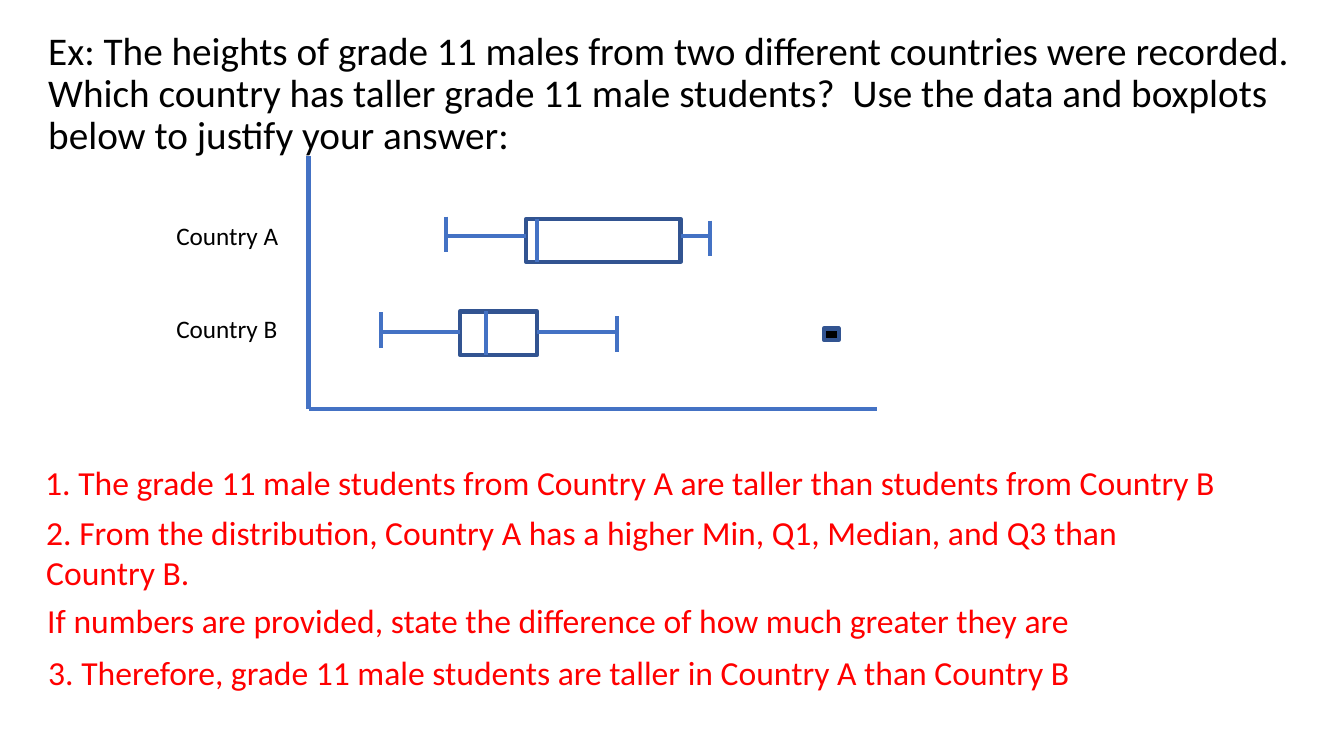
from lxml import etree
from pptx import Presentation
from pptx.dml.color import RGBColor
from pptx.enum.shapes import MSO_CONNECTOR, MSO_SHAPE
from pptx.oxml.ns import qn
from pptx.util import Inches, Pt

STRAIGHT = MSO_CONNECTOR.STRAIGHT
RECTANGLE = MSO_SHAPE.RECTANGLE

BLACK = RGBColor(0x00, 0x00, 0x00)
RED = RGBColor(0xFF, 0x00, 0x00)
BLUE = RGBColor(0x44, 0x72, 0xC4)
DARK_BLUE = RGBColor(0x32, 0x54, 0x91)

FONT = "Calibri"
LINE_WIDTH = Pt(3)
BOX_HEIGHT = 0.43
CAP_HEIGHT = 0.35

QUESTION = (
    "Ex: The heights of grade 11 males from two different countries were recorded. "
    "Which country has taller grade 11 male students?  "
    "Use the data and boxplots below to justify your answer:"
)
COUNTRIES = [("Country A", 2.14), ("Country B", 3.06)]
BOXPLOTS = [
    {"q1": 5.22, "median": 5.33, "q3": 6.75, "box_top": 2.17, "middle": 2.34,
     "caps": [(4.42, 2.15), (7.04, 2.19)]},
    {"q1": 4.56, "median": 4.82, "q3": 5.33, "box_top": 3.09, "middle": 3.29,
     "caps": [(3.78, 3.1), (6.12, 3.14)]},
]
ANSWERS = [
    ("1. The grade 11 male students from Country A are taller than students from Country B",
     (0.35, 4.53, 12.45, 0.5)),
    ("2. From the distribution, Country A has a higher Min, Q1, Median, and Q3 than Country B.",
     (0.36, 5.03, 11.39, 0.91)),
    ("If numbers are provided, state the difference of how much greater they are",
     (0.37, 5.9, 11.39, 0.5)),
    ("3. Therefore, grade 11 male students are taller in Country A than Country B",
     (0.38, 6.42, 11.39, 0.5)),
]


def add_line(s, x1, y1, x2, y2):
    """Draw a blue line without a shadow."""
    sp = s.shapes.add_connector(STRAIGHT, *map(Inches, (x1, y1, x2, y2)))
    sp.line.color.rgb = BLUE
    sp.line.width = LINE_WIDTH
    etree.SubElement(sp._element.spPr, qn("a:effectLst"))


def add_box(s, left, top, width, height, fill=None):
    """Draw a dark blue outlined rectangle, filled if a colour is given."""
    sp = s.shapes.add_shape(RECTANGLE, *map(Inches, (left, top, width, height)))
    sp.shadow.inherit = False
    sp.line.color.rgb = DARK_BLUE
    sp.line.width = LINE_WIDTH
    if fill is None:
        sp.fill.background()
    else:
        sp.fill.solid()
        sp.fill.fore_color.rgb = fill


def add_text(s, text, at, size, color=BLACK, **spacing):
    """Add a wrapped one-paragraph text box."""
    tf = s.shapes.add_textbox(*map(Inches, at)).text_frame
    tf.word_wrap = True
    p = tf.paragraphs[0]
    for name, value in spacing.items():
        setattr(p, name, value)
    r = p.add_run()
    r.text = text
    for name, value in {"name": FONT, "size": Pt(size)}.items():
        setattr(r.font, name, value)
    r.font.color.rgb = color


def add_boxplot(s, q1, median, q3, box_top, middle, caps):
    """Draw a box with its median, whiskers and whisker caps."""
    add_box(s, q1, box_top, q3 - q1, BOX_HEIGHT)
    add_line(s, median, box_top, median, box_top + BOX_HEIGHT)
    for quartile, (x, top) in zip((q1, q3), caps):
        add_line(s, quartile, middle, x, middle)
        add_line(s, x, top, x, top + CAP_HEIGHT)


def main():
    """Build the slide and save it."""
    prs = Presentation()
    prs.slide_width, prs.slide_height = Inches(13.33), Inches(7.5)
    s = prs.slides.add_slide(prs.slide_layouts[6])

    for boxplot in BOXPLOTS:
        add_boxplot(s, **boxplot)
    add_line(s, 3.06, 4.06, 8.7, 4.06)
    add_line(s, 3.06, 4.06, 3.06, 1.55)
    for country, top in COUNTRIES:
        add_text(s, country, (1.65, top, 1.45, 0.4), 18)
    add_text(s, QUESTION, (0.38, 0.26, 12.62, 1.41), 28,
             line_spacing=0.9, space_before=Pt(10))
    add_box(s, 8.17, 3.26, 0.15, 0.11, fill=BLACK)
    for answer, at in ANSWERS:
        add_text(s, answer, at, 24, RED)

    prs.save("out.pptx")


if __name__ == "__main__":
    main()
